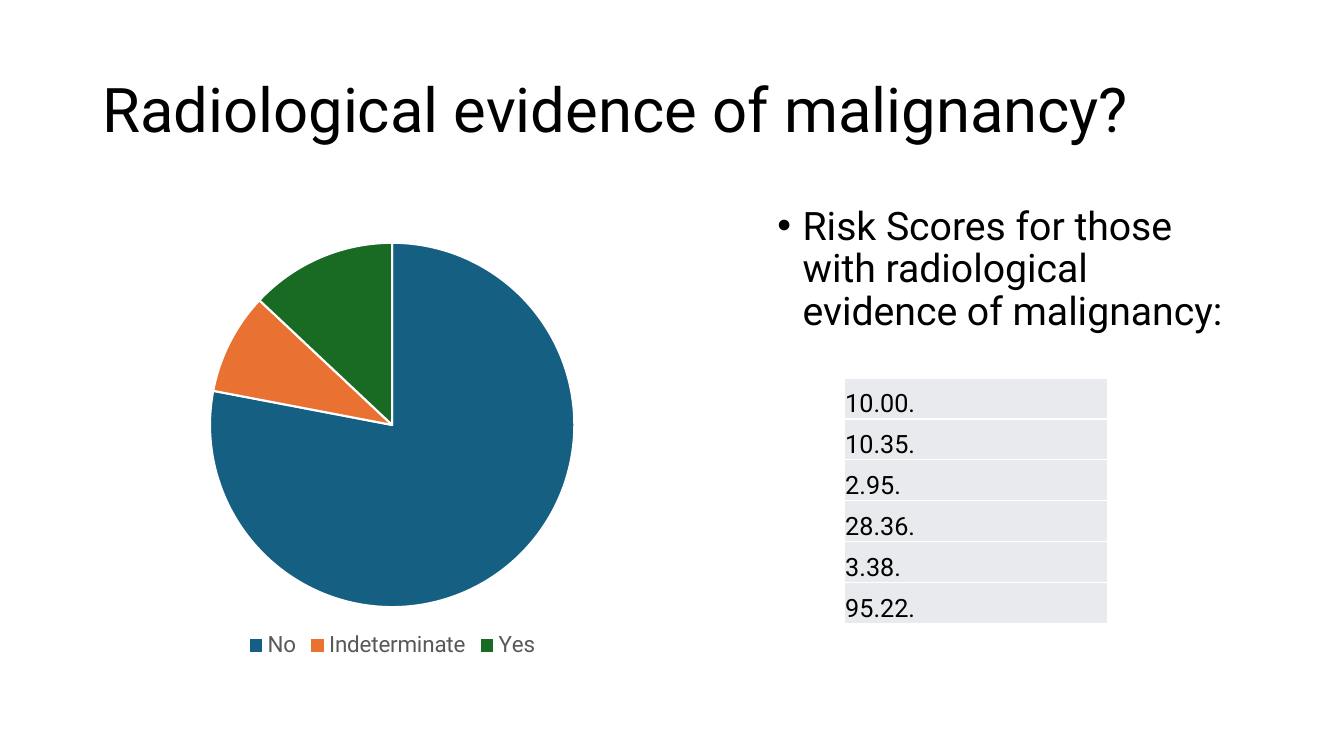
from lxml.etree import SubElement
from pptx import Presentation
from pptx.chart.data import CategoryChartData
from pptx.dml.color import RGBColor
from pptx.enum.chart import XL_CHART_TYPE, XL_LEGEND_POSITION
from pptx.enum.text import MSO_ANCHOR
from pptx.oxml.ns import qn
from pptx.util import Pt

PX = 9525
FONT = "Roboto"
SHARES = {"No": (78, "156082"), "Indeterminate": (9, "E97132"), "Yes": (13, "196B24")}
SCORES = ["10.00.", "10.35.", "2.95.", "28.36.", "3.38.", "95.22."]


def px(*sizes):
    """Turn px lengths into EMU."""
    return [size * PX for size in sizes]


def paint(target, color):
    """Give a fill or a line one solid colour."""
    target.solid()
    target.fore_color.rgb = RGBColor.from_string(color)


def style(font, size, color="000000"):
    """Set the face, size and colour of a font."""
    font.name = FONT
    font.size = Pt(size)
    font.color.rgb = RGBColor.from_string(color)


def add_text(slide, box, text, size, anchor=MSO_ANCHOR.TOP):
    """Add a wrapped text box and return its paragraph."""
    frame = slide.shapes.add_textbox(*px(*box)).text_frame
    frame.word_wrap = True
    frame.vertical_anchor = anchor
    frame.text = text
    para = frame.paragraphs[0]
    para.line_spacing = 0.9
    style(para.runs[0].font, size)
    return para


def add_bullet(para, indent):
    """Put a round bullet with a hanging indent on a paragraph."""
    props = para._p.get_or_add_pPr()
    props.set("marL", str(indent * PX))
    props.set("indent", str(-indent * PX))
    SubElement(props, qn("a:buFont"), typeface="Arial")
    SubElement(props, qn("a:buChar"), char="•")


def add_pie(slide, box, shares):
    """Add a pie chart with a legend below it."""
    data = CategoryChartData()
    data.categories = list(shares)
    data.add_series("Series 1", [value for value, _ in shares.values()])
    chart = slide.shapes.add_chart(XL_CHART_TYPE.PIE, *px(*box), data).chart
    chart.has_title = False
    style(chart.font, 10)
    chart.has_legend = True
    chart.legend.position = XL_LEGEND_POSITION.BOTTOM
    chart.legend.include_in_layout = False
    style(chart.legend.font, 16, "595959")
    plot = chart.plots[0]
    plot.vary_by_categories = True
    for index, (_, color) in enumerate(shares.values()):
        slice_format = plot.series[0].points[index].format
        paint(slice_format.fill, color)
        paint(slice_format.line.fill, "FFFFFF")
        slice_format.line.width = Pt(1.5)


def add_border(cell, color):
    """Draw a thin line on all four sides of a cell."""
    props = cell._tc.get_or_add_tcPr()
    for side in ("lnL", "lnR", "lnT", "lnB"):
        line = SubElement(props, qn("a:" + side), w=str(Pt(1)))
        SubElement(SubElement(line, qn("a:solidFill")), qn("a:srgbClr"), val=color)


def add_scores(slide, box, scores):
    """Add a table with one score in each row."""
    table = slide.shapes.add_table(len(scores), 1, *px(*box)).table
    table.first_row = table.horz_banding = False
    for row, score in enumerate(scores):
        cell = table.cell(row, 0)
        add_border(cell, "FFFFFF")
        paint(cell.fill, "E8EAED")
        cell.vertical_anchor = MSO_ANCHOR.BOTTOM
        cell.margin_left = cell.margin_right = cell.margin_top = PX
        cell.margin_bottom = 0
        cell.text_frame.text = score
        style(cell.text_frame.paragraphs[0].runs[0].font, 18)


def main():
    """Build the slide and save it."""
    deck = Presentation()
    deck.slide_width, deck.slide_height = px(1280, 720)
    slide = deck.slides.add_slide(deck.slide_layouts[6])
    add_text(slide, (88, 38, 1104, 139), "Radiological evidence of malignancy?", 44,
             MSO_ANCHOR.MIDDLE)
    para = add_text(slide, (731, 192, 462, 457),
                    "Risk Scores for those with radiological evidence of malignancy:", 28)
    para.space_before = Pt(10)
    add_bullet(para, 24)
    add_pie(slide, (58, 218, 631, 413), SHARES)
    add_scores(slide, (804, 360, 251, 234), SCORES)
    deck.save("out.pptx")


if __name__ == "__main__":
    main()
